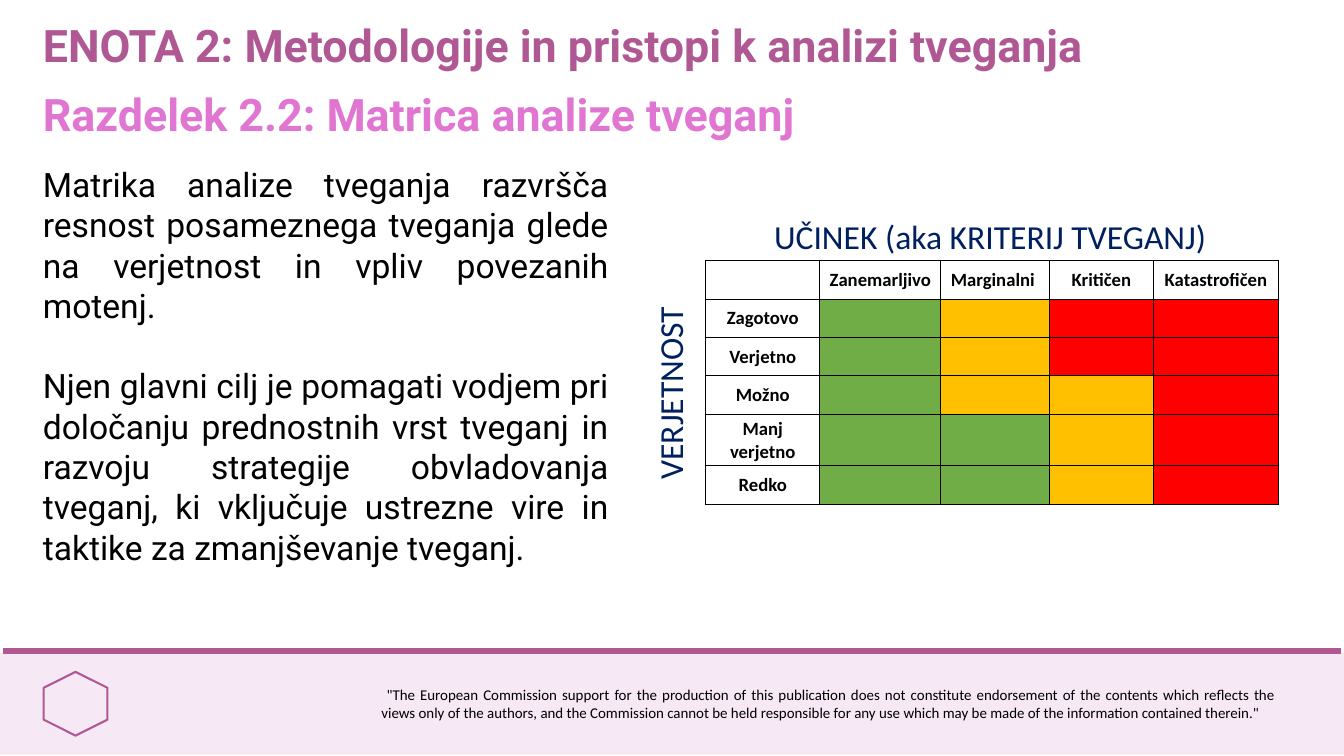
import pptx
import pptx.dml.color
import pptx.enum.shapes
import pptx.enum.text
import pptx.oxml
import pptx.oxml.ns
import pptx.util

Cm, Pt = pptx.util.Cm, pptx.util.Pt
ALIGN = pptx.enum.text.PP_ALIGN
SHAPE = pptx.enum.shapes.MSO_SHAPE
CONNECTOR = pptx.enum.shapes.MSO_CONNECTOR

PURPLE, PINK, PALE, NAVY = "B05894", "E076D1", "F6E9F5", "002060"
BLACK, WHITE = "000000", "FFFFFF"
LEVELS = {"G": "70AD47", "Y": "FFC000", "R": "FF0000"}

TITLE = "ENOTA 2: Metodologije in pristopi k analizi tveganja"
SUBTITLE = "Razdelek 2.2: Matrica analize tveganj"
BODY = [
    "Matrika analize tveganja razvršča resnost posameznega tveganja glede na "
    "verjetnost in vpliv povezanih motenj.",
    "Njen glavni cilj je pomagati vodjem pri določanju prednostnih vrst tveganj in "
    "razvoju strategije obvladovanja tveganj, ki vključuje ustrezne vire in taktike "
    "za zmanjševanje tveganj.",
]
DISCLAIMER = (
    " \"The European Commission support for the production of this publication does "
    "not constitute endorsement of the contents which reflects the views only of the "
    "authors, and the Commission cannot be held responsible for any use which may be "
    "made of the information contained therein.\""
)
IMPACT_AXIS = "UČINEK (aka KRITERIJ TVEGANJ)"
LIKELIHOOD_AXIS = "VERJETNOST"
IMPACTS = ["", "Zanemarljivo", "Marginalni ", "Kritičen", "Katastrofičen"]
RISKS = [
    ("Zagotovo", "GYRR"),
    ("Verjetno", "GYRR"),
    ("Možno", "GYYR"),
    ("Manj verjetno", "GGYR"),
    ("Redko", "GGYR"),
]
COL_WIDTHS = [4.32, 4.57, 4.09, 3.96, 4.7]
ROW_HEIGHTS = [1.45, 1.45, 1.45, 1.45, 1.93, 1.45]


def rgb(color):
    return pptx.dml.color.RGBColor.from_string(color)


def write(tf, text, size=36, font="Calibri", color=BLACK, bold=False,
          align=ALIGN.LEFT, gap=0):
    """Fill a text frame with one paragraph per item; gap is the points between them."""
    for i, line in enumerate([text] if isinstance(text, str) else text):
        p = tf.add_paragraph() if i else tf.paragraphs[0]
        p.alignment = align
        if i:
            p.space_before = Pt(gap)
        r = p.add_run()
        r.text = line
        r.font.size, r.font.name, r.font.bold = Pt(size), font, bold
        r.font.color.rgb = rgb(color)


def add_text(s, box, text, rotation=0, **fmt):
    sp = s.shapes.add_textbox(*map(Cm, box))
    sp.rotation = rotation
    sp.text_frame.word_wrap = True
    write(sp.text_frame, text, **fmt)


def set_borders(cell, color=BLACK, width=1):
    """Line all four sides; the lines must come before the fill in tcPr."""
    tc_pr = cell._tc.get_or_add_tcPr()
    for i, side in enumerate(("lnL", "lnR", "lnT", "lnB")):
        tc_pr.insert(i, pptx.oxml.parse_xml(
            f'<a:{side} {pptx.oxml.ns.nsdecls("a")} w="{Pt(width)}"><a:solidFill>'
            f'<a:srgbClr val="{color}"/></a:solidFill></a:{side}>'))


def add_footer(s):
    band = s.shapes.add_shape(SHAPE.RECTANGLE, 0, Cm(24.69), Cm(50.8), Cm(3.84))
    band.shadow.inherit = False
    band.fill.solid()
    band.fill.fore_color.rgb = rgb(PALE)
    band.line.fill.background()

    rule = s.shapes.add_connector(
        CONNECTOR.STRAIGHT, Cm(0.13), Cm(24.61), Cm(50.67), Cm(24.61))
    rule.line.color.rgb = rgb(PURPLE)
    rule.line.width = Pt(6.75)
    rule._element.spPr.append(pptx.oxml.parse_xml(
        f'<a:effectLst {pptx.oxml.ns.nsdecls("a")}/>'))

    mark = s.shapes.add_shape(SHAPE.HEXAGON, Cm(1.65), Cm(25.4), Cm(2.41), Cm(2.41))
    mark.rotation = 90
    mark.shadow.inherit = False
    mark.fill.background()
    mark.line.color.rgb = rgb(PURPLE)
    mark.line.width = Pt(2.25)

    add_text(s, (14.17, 25.78, 34.29, 1.63), DISCLAIMER, size=16, align=ALIGN.JUSTIFY)


def add_matrix(s, left, top):
    rows = [[(text, WHITE) for text in IMPACTS]]
    rows += [[(name, WHITE)] + [("", LEVELS[key]) for key in keys]
             for name, keys in RISKS]
    table = s.shapes.add_table(
        len(rows), len(COL_WIDTHS), Cm(left), Cm(top),
        Cm(sum(COL_WIDTHS)), Cm(sum(ROW_HEIGHTS))).table
    for col, width in zip(table.columns, COL_WIDTHS):
        col.width = Cm(width)
    for row, height, contents in zip(table.rows, ROW_HEIGHTS, rows):
        row.height = Cm(height)
        for cell, (text, color) in zip(row.cells, contents):
            cell.fill.solid()
            cell.fill.fore_color.rgb = rgb(color)
            set_borders(cell)
            cell.vertical_anchor = pptx.enum.text.MSO_ANCHOR.MIDDLE
            if text:
                write(cell.text_frame, text, size=20, bold=True, align=ALIGN.CENTER)


def main():
    prs = pptx.Presentation()
    prs.slide_width, prs.slide_height = Cm(50.8), Cm(28.58)
    s = prs.slides.add_slide(prs.slide_layouts[6])

    add_footer(s)
    add_text(s, (1.37, 0.56, 44.65, 2.31), TITLE,
             size=48, font="Roboto", color=PURPLE, bold=True)
    add_text(s, (1.37, 3.15, 37.77, 2.31), SUBTITLE,
             size=48, font="Roboto", color=PINK, bold=True)
    add_text(s, (1.37, 6.07, 21.89, 15.65), BODY,
             font="Roboto", align=ALIGN.JUSTIFY, gap=43)
    add_text(s, (29.01, 8.05, 19.3, 1.8), IMPACT_AXIS, color=NAVY)
    add_text(s, (21.59, 13.74, 7.47, 1.8), LIKELIHOOD_AXIS, rotation=270, color=NAVY)
    add_matrix(s, 26.67, 9.86)

    prs.save("out.pptx")


if __name__ == "__main__":
    main()
